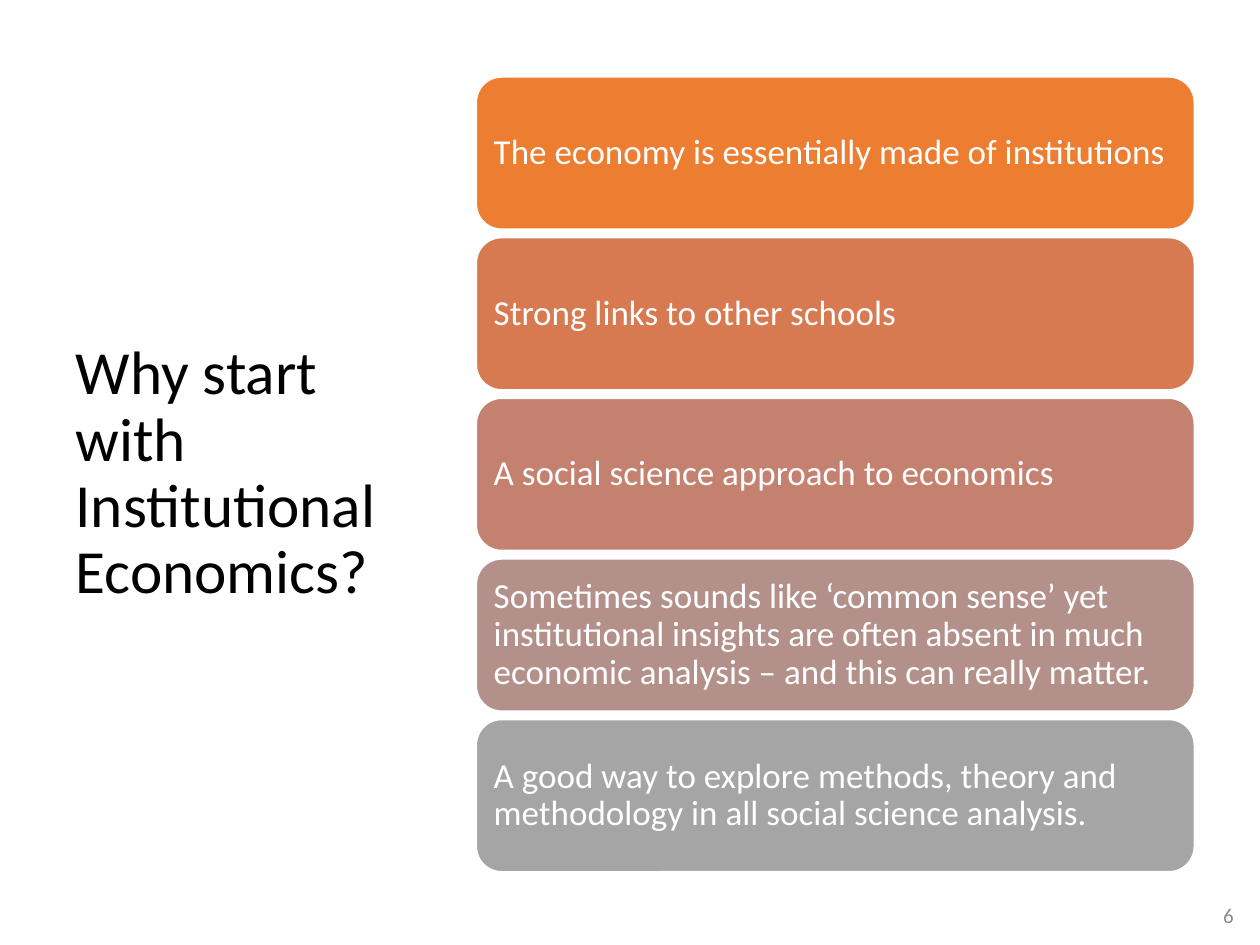
from pptx import Presentation
from pptx.dml.color import RGBColor
from pptx.enum.shapes import MSO_SHAPE as SHAPE
from pptx.enum.text import MSO_ANCHOR as ANCHOR, PP_ALIGN as ALIGN
from pptx.util import Inches, Pt

COLORS = {"white": "FFFFFF", "title": "000000", "number": "8C8C8C"}
REASONS = [
    ("The economy is essentially made of institutions", "ED7D31"),
    ("Strong links to other schools", "D87A51"),
    ("A social science approach to economics", "C48170"),
    ("Sometimes sounds like ‘common sense’ yet institutional insights are "
     "often absent in much economic analysis – and this can really matter.", "B4908B"),
    ("A good way to explore methods, theory and methodology in all social "
     "science analysis.", "A5A5A5"),
]
TOP, PITCH = 0.61, 1.275


def write(shape, text, size, color, align=ALIGN.LEFT, spacing=0.9):
    tf = shape.text_frame
    tf.word_wrap = True
    tf.vertical_anchor = ANCHOR.MIDDLE
    tf.text = text
    p = tf.paragraphs[0]
    p.alignment = align
    p.line_spacing = spacing
    font = p.runs[0].font
    font.name = "Calibri"
    font.size = Pt(size)
    font.color.rgb = RGBColor.from_string(color)


prs = Presentation()
prs.slide_width, prs.slide_height = Inches(10), Inches(7.5)
s = prs.slides.add_slide(prs.slide_layouts[5])
s.background.fill.solid()
s.background.fill.fore_color.rgb = RGBColor.from_string(COLORS["white"])

title = s.shapes.title
title.left, title.top = Inches(0.5), Inches(0.6)
title.width, title.height = Inches(2.87), Inches(6.33)
write(title, "Why start with Institutional Economics?", 35, COLORS["title"])

for i, (reason, fill) in enumerate(REASONS):
    box = s.shapes.add_shape(SHAPE.ROUNDED_RECTANGLE, Inches(3.78),
                             Inches(TOP + i * PITCH), Inches(5.7), Inches(1.21))
    box.shadow.inherit = False
    box.fill.solid()
    box.fill.fore_color.rgb = RGBColor.from_string(fill)
    box.line.color.rgb = RGBColor.from_string(COLORS["white"])
    box.line.width = Pt(1)
    tf = box.text_frame
    tf.margin_left = tf.margin_right = tf.margin_top = tf.margin_bottom = Inches(0.08)
    write(box, reason, 20, COLORS["white"])

number = s.shapes.add_textbox(Inches(9.54), Inches(7.06), Inches(0.35), Inches(0.4))
write(number, "6", 12, COLORS["number"], ALIGN.RIGHT, 1.0)
number.text_frame.paragraphs[0].space_after = Pt(4.5)

prs.save("out.pptx")
